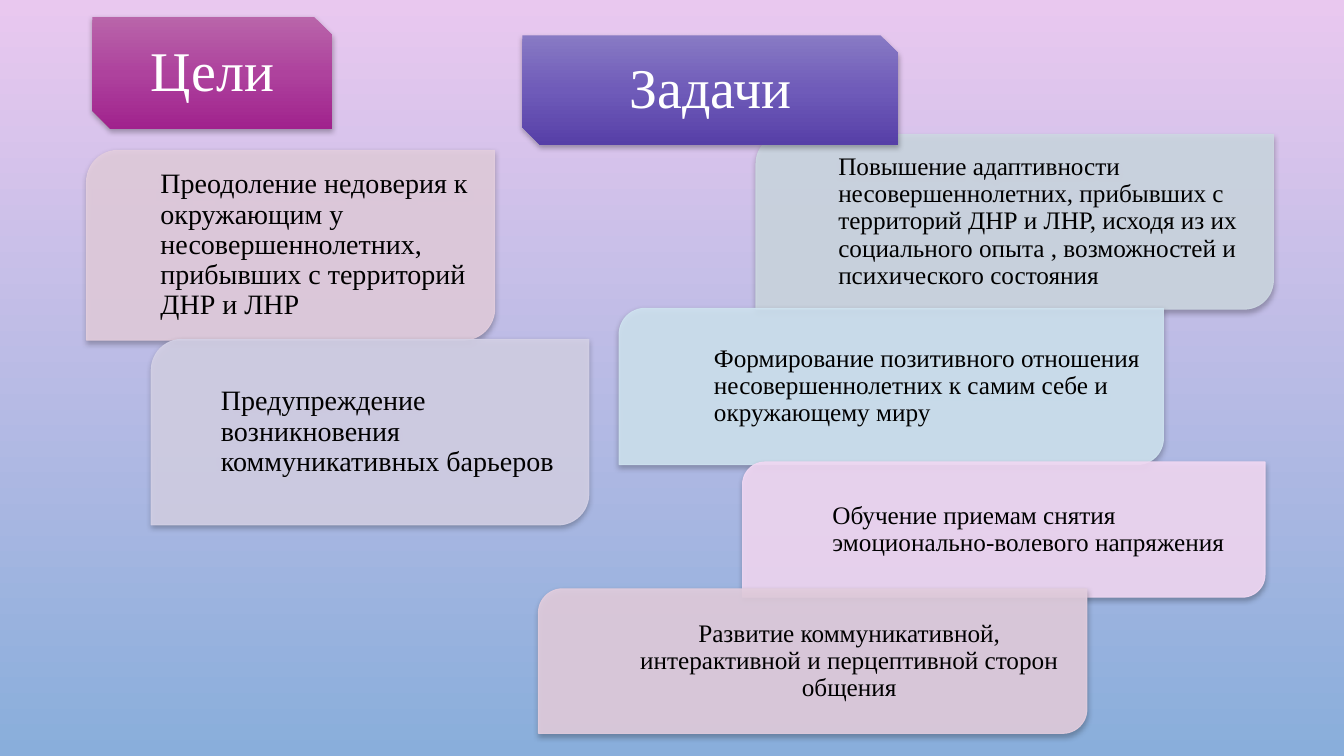
from copy import deepcopy

from lxml import etree
from pptx import Presentation
from pptx.dml.color import RGBColor
from pptx.enum.shapes import MSO_SHAPE
from pptx.enum.text import MSO_ANCHOR, PP_ALIGN
from pptx.oxml.ns import qn
from pptx.util import Inches, Pt

CARD = MSO_SHAPE.ROUND_2_DIAG_RECTANGLE
TITLE = MSO_SHAPE.SNIP_2_DIAG_RECTANGLE
MIDDLE = MSO_ANCHOR.MIDDLE
LEFT, CENTER = PP_ALIGN.LEFT, PP_ALIGN.CENTER
COLUMNS, ROWS = 160, 90
CORNER_INSET = 0.0488


def rgb(color):
    """Turn a hex string into a colour."""
    return RGBColor.from_string(color)


class Deck:
    """Holds the style and the current slide."""

    font = "Times New Roman"
    dark, light = "000000", "FFFFFF"

    def __init__(self):
        """Open a wide presentation with one blank slide."""
        self.prs = Presentation()
        self.prs.slide_width = Inches(13.33)
        self.prs.slide_height = Inches(7.5)
        self.s = self.prs.slides.add_slide(self.prs.slide_layouts[6])

    def x(self, columns):
        """Convert grid columns to a length."""
        return int(self.prs.slide_width * columns / COLUMNS)

    def y(self, rows):
        """Convert grid rows to a length."""
        return int(self.prs.slide_height * rows / ROWS)

    def gradient(self, fill, element, colors):
        """Paint evenly spaced colours from top to bottom."""
        fill.gradient()
        fill.gradient_angle = 270
        first = element.find(".//" + qn("a:gs"))
        for _ in colors[2:]:
            first.addnext(deepcopy(first))
        for i, (stop, color) in enumerate(zip(fill.gradient_stops, colors)):
            stop.color.rgb = rgb(color)
            stop.position = i / (len(colors) - 1)

    def background(self, *colors):
        """Give the slide a gradient background."""
        self.gradient(self.s.background.fill, self.s.element, colors)

    def alpha(self, color, percent):
        """Make a colour element partly transparent."""
        etree.SubElement(color, qn("a:alpha"), val=str(percent * 1000))

    def shadow(self, sp):
        """Drop a soft shadow below a shape."""
        sp.shadow.inherit = False
        effects = sp.element.spPr.find(qn("a:effectLst"))
        outer = etree.SubElement(effects, qn("a:outerShdw"), blurRad=str(Pt(4)),
                                 dist=str(Pt(2)), dir="5400000", rotWithShape="0")
        self.alpha(etree.SubElement(outer, qn("a:srgbClr"), val=self.dark), 28)

    def shape(self, kind, box, text, size, color, align):
        """Add a shape with vertically centred text and a shadow."""
        left, top, width, height = box
        sp = self.s.shapes.add_shape(kind, self.x(left), self.y(top),
                                     self.x(width), self.y(height))
        self.shadow(sp)
        tf = sp.text_frame
        tf.word_wrap = True
        tf.vertical_anchor = MIDDLE
        tf.margin_left = tf.margin_right = tf.margin_top = tf.margin_bottom = 0
        p = tf.paragraphs[0]
        p.text = text
        p.alignment = align
        p.line_spacing = 0.9
        p.font.name = self.font
        p.font.size = Pt(size)
        p.font.color.rgb = rgb(color)
        return sp

    def title(self, box, text, *colors):
        """Add a snipped heading with a gradient fill."""
        sp = self.shape(TITLE, box, text, 40, self.light, CENTER)
        self.gradient(sp.fill, sp.element, colors)
        sp.line.fill.background()

    def card(self, box, indent, right, fill, text, size=18, align=LEFT):
        """Add a translucent rounded card with indented text."""
        sp = self.shape(CARD, box, text, size, self.dark, align)
        sp.fill.solid()
        sp.fill.fore_color.rgb = rgb(fill)
        sp.line.color.rgb = rgb(fill)
        sp.line.width = Pt(0.75)
        for color in sp.element.spPr.findall(".//" + qn("a:solidFill") + "/" + qn("a:srgbClr")):
            self.alpha(color, 90)
        corner = self.y(box[3] * CORNER_INSET)
        sp.text_frame.margin_left = self.x(indent) - corner
        sp.text_frame.margin_right = max(0, self.x(right) - corner)


def main():
    """Build the slide of goals and tasks."""
    deck = Deck()
    deck.background("E9C8EF", "89AEDB")
    deck.card((10.3, 17.9, 48.6, 22.6), 8.8, 3.1, "E3CEDE",
              "Преодоление недоверия к окружающим у несовершеннолетних, "
              "прибывших с территорий ДНР и ЛНР", size=20)
    deck.card((18, 40.4, 52.1, 22.1), 8.3, 1.9, "D4D1E6",
              "Предупреждение возникновения коммуникативных барьеров", size=20)
    deck.title((11, 2, 28.6, 13.4), "Цели", "B965AA", "AE429D", "A0228D")
    deck.card((90, 16, 61.6, 20.8), 9.8, 1.7, "CDD8E2",
              "Повышение адаптивности несовершеннолетних, прибывших с территорий "
              "ДНР и ЛНР, исходя из их социального опыта , возможностей и "
              "психического состояния")
    deck.card((73.7, 36.7, 64.8, 18.6), 11.3, 2.6, "CFE3F0",
              "Формирование позитивного отношения несовершеннолетних к самим себе "
              "и окружающему миру")
    deck.card((88.4, 55, 62.2, 16.1), 10.7, 2.5, "F2D9F4",
              "Обучение приемам снятия эмоционально-волевого напряжения")
    deck.card((64.1, 70.1, 65.3, 17.2), 10.4, 1.7, "E3CEDE",
              "Развитие коммуникативной, интерактивной и перцептивной сторон общения",
              align=CENTER)
    deck.title((62.2, 4.2, 44.8, 13.1), "Задачи", "887AC4", "6F5BB9", "563FA7")
    deck.prs.save("out.pptx")


if __name__ == "__main__":
    main()
